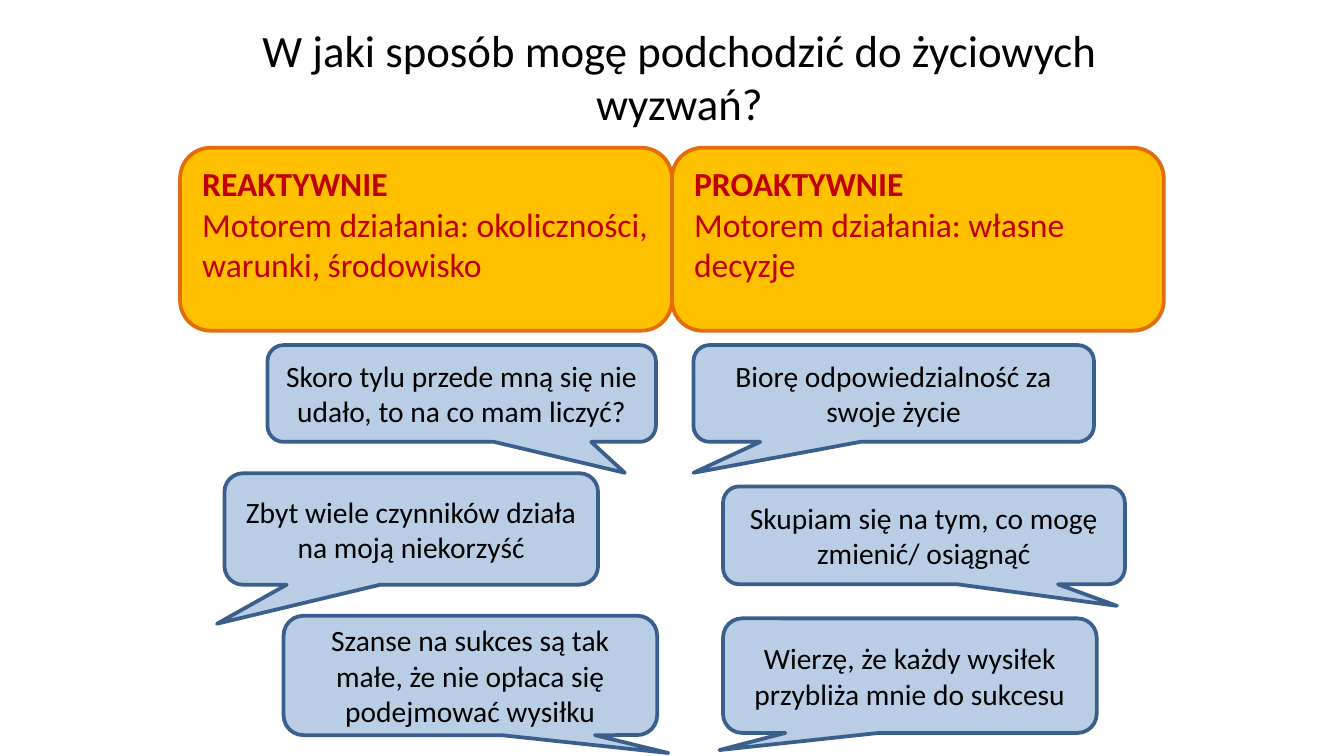
from dataclasses import dataclass

from pptx import Presentation
from pptx.dml.color import RGBColor
from pptx.enum.shapes import MSO_SHAPE as Preset
from pptx.enum.text import MSO_ANCHOR as Anchor, MSO_AUTO_SIZE as AutoSize, PP_ALIGN as Align
from pptx.shapes.autoshape import Shape
from pptx.slide import Slide
from pptx.text.text import TextFrame
from pptx.util import Inches, Pt

BLACK = RGBColor(0x00, 0x00, 0x00)
RED = RGBColor(0xC0, 0x00, 0x00)
AMBER = RGBColor(0xFF, 0xC0, 0x00)
ORANGE = RGBColor(0xE4, 0x6C, 0x0A)
LIGHT_BLUE = RGBColor(0xB9, 0xCD, 0xE5)
DARK_BLUE = RGBColor(0x3A, 0x5F, 0x8C)

WIDTH = Inches(10)
HEIGHT = WIDTH * 9 // 16

TITLE_FORMAT = {"name": "Calibri", "size": Pt(24), "bold": False}
HEADING_FORMAT = {"name": "Calibri", "size": Pt(18), "bold": True}
DRIVER_FORMAT = {**HEADING_FORMAT, "bold": False}
QUOTE_FORMAT = {"name": "Calibri", "size": Pt(15.8), "bold": False}
FRAME_FORMAT = {
    "word_wrap": True,
    "auto_size": AutoSize.NONE,
    "vertical_anchor": Anchor.MIDDLE,
}


@dataclass(frozen=True)
class Area:
    left_percent: float
    top_percent: float
    width_percent: float
    height_percent: float

    def lengths(self) -> tuple[int, int, int, int]:
        return (
            round(WIDTH * self.left_percent / 100),
            round(HEIGHT * self.top_percent / 100),
            round(WIDTH * self.width_percent / 100),
            round(HEIGHT * self.height_percent / 100),
        )

    def place(self, shape: Shape) -> None:
        shape.left, shape.top, shape.width, shape.height = self.lengths()


@dataclass(frozen=True)
class Attitude:
    heading: str
    driver: str


@dataclass(frozen=True)
class Quote:
    text: str
    area: Area
    tail: tuple[float, float]


TITLE = "W jaki sposób mogę podchodzić do życiowych wyzwań?"
TITLE_AREA = Area(16.8, 1.7, 67.5, 16.7)
CARD_WIDTH = 36.6

ATTITUDES = (
    Attitude("REAKTYWNIE", "Motorem działania: okoliczności, warunki, środowisko"),
    Attitude("PROAKTYWNIE", "Motorem działania: własne decyzje"),
)

QUOTES = (
    Quote("Skoro tylu przede mną się nie udało, to na co mam liczyć?",
          Area(19.9, 45.65, 28.9, 12.8), (0.42, 0.82)),
    Quote("Zbyt wiele czynników działa na moją niekorzyść",
          Area(16.7, 62.6, 27.8, 14.75), (-0.52, 0.85)),
    Quote("Szanse na sukces są tak małe, że nie opłaca się podejmować wysiłku",
          Area(21.1, 81.45, 27.8, 15.8), (0.53, 0.65)),
    Quote("Biorę odpowiedzialność za swoje życie",
          Area(51.6, 45.65, 29.8, 12.8), (-0.5, 0.82)),
    Quote("Wierzę, że każdy wysiłek przybliża mnie do sukcesu",
          Area(53.8, 81.8, 27.8, 15.15), (-0.51, 0.65)),
    Quote("Skupiam się na tym, co mogę zmienić/ osiągnąć",
          Area(53.8, 64.35, 29.9, 12.95), (0.48, 0.72)),
)


def apply_format(target: object, values: dict) -> None:
    for name, value in values.items():
        setattr(target, name, value)


def write(frame: TextFrame, lines: list[tuple[str, dict]],
          color: RGBColor, alignment: Align) -> None:
    apply_format(frame, FRAME_FORMAT)
    for index, (text, values) in enumerate(lines):
        para = frame.add_paragraph() if index else frame.paragraphs[0]
        para.alignment = alignment
        span = para.add_run()
        span.text = text
        apply_format(span.font, values)
        span.font.color.rgb = color


def add_box(page: Slide, preset: Preset, area: Area,
            fill: RGBColor, line: RGBColor) -> Shape:
    box = page.shapes.add_shape(preset, *area.lengths())
    box.shadow.inherit = False
    box.fill.solid()
    box.fill.fore_color.rgb = fill
    box.line.color.rgb = line
    box.line.width = Pt(2)
    return box


def add_quote(page: Slide, quote: Quote) -> None:
    box = add_box(page, Preset.ROUNDED_RECTANGULAR_CALLOUT, quote.area,
                  LIGHT_BLUE, DARK_BLUE)
    box.adjustments[0], box.adjustments[1] = quote.tail
    write(box.text_frame, [(quote.text, QUOTE_FORMAT)], BLACK, Align.CENTER)


def add_attitude(page: Slide, attitude: Attitude, column: int) -> None:
    area = Area(50 + (column - 1) * CARD_WIDTH, 19.55, CARD_WIDTH, 24.2)
    box = add_box(page, Preset.ROUNDED_RECTANGLE, area, AMBER, ORANGE)
    box.text_frame.margin_bottom = Inches(0.28)
    lines = [(attitude.heading, HEADING_FORMAT), (attitude.driver, DRIVER_FORMAT)]
    write(box.text_frame, lines, RED, Align.LEFT)


def main() -> None:
    deck = Presentation()
    deck.slide_width, deck.slide_height = WIDTH, HEIGHT
    page = deck.slides.add_slide(deck.slide_layouts.get_by_name("Title Only"))

    title = page.shapes.title
    TITLE_AREA.place(title)
    write(title.text_frame, [(TITLE, TITLE_FORMAT)], BLACK, Align.CENTER)

    for quote in QUOTES:
        add_quote(page, quote)
    for column, attitude in enumerate(ATTITUDES):
        add_attitude(page, attitude, column)

    deck.save("out.pptx")


if __name__ == "__main__":
    main()
